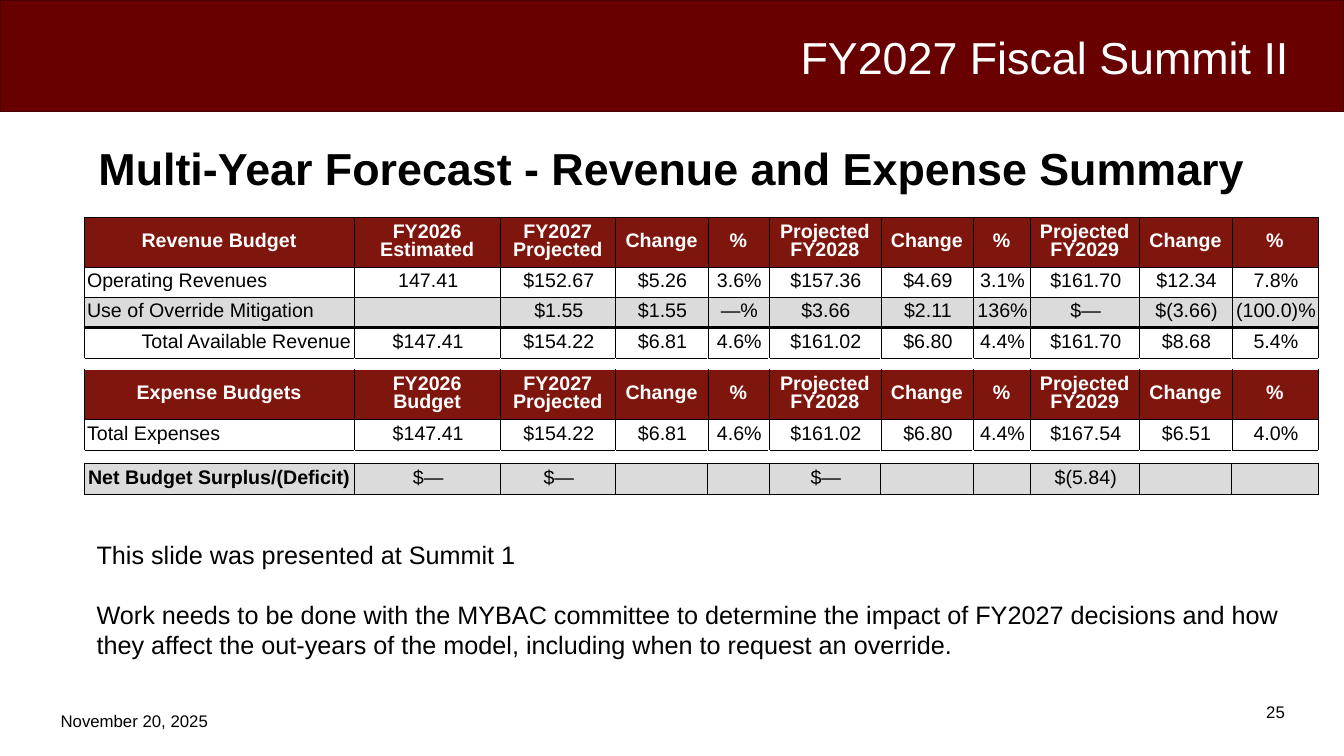
from dataclasses import dataclass

import pptx
import pptx.dml.color
import pptx.enum.shapes
import pptx.enum.text
import pptx.oxml.ns
import pptx.util
from lxml import etree

ALIGN = pptx.enum.text.PP_ALIGN
ANCHOR = pptx.enum.text.MSO_ANCHOR
FONT = "Arial"
BLACK, WHITE = "000000", "FFFFFF"
BANNER, BANNER_EDGE = "680000", "4A0000"
HEADING_RED, GREY = "7F160E", "DBDBDB"

# The slide is a grid of 160 columns by 90 rows
SLIDE_W, SLIDE_H = pptx.util.Inches(13.33), pptx.util.Inches(7.5)


def cols(n: float) -> int:
    return round(SLIDE_W * n / 160)


def rows(n: float) -> int:
    return round(SLIDE_H * n / 90)


def rgb(color: str) -> pptx.dml.color.RGBColor:
    return pptx.dml.color.RGBColor.from_string(color)


@dataclass(frozen=True)
class Box:
    left: float
    top: float
    width: float
    height: float

    def place(self) -> tuple[int, int, int, int]:
        return cols(self.left), rows(self.top), cols(self.width), rows(self.height)


@dataclass(frozen=True)
class Label:
    text: str
    box: Box
    size: float
    color: str = BLACK
    align: ALIGN = ALIGN.CENTER
    spacing: float = 1.0


@dataclass(frozen=True)
class Rule:
    color: str = BLACK
    width: float = 0.25


@dataclass(frozen=True)
class Row:
    height: float
    cells: tuple[str, ...]
    fill: str | None = None
    color: str = BLACK
    bold: bool = False
    label_bold: bool = False
    label_align: ALIGN = ALIGN.LEFT
    side: Rule = Rule()


COLUMN_WIDTHS = (32.16, 17.4, 13.7, 11, 7.3, 13.3, 11, 6.8, 13, 11, 10.3)
FORECAST_HEADINGS = ("FY2027 Projected", "Change", "%", "Projected FY2028", "Change", "%",
                     "Projected FY2029", "Change", "%")


def heading(name: str, base_year: str) -> Row:
    return Row(6, (name, base_year, *FORECAST_HEADINGS), HEADING_RED, WHITE, True, True, ALIGN.CENTER)


def gap(height: float) -> Row:
    return Row(height, ("",) * len(COLUMN_WIDTHS), side=Rule(WHITE, 1))


BUDGET_ROWS = (
    heading("Revenue Budget", "FY2026 Estimated"),
    Row(3.6, ("Operating Revenues", "147.41", "$152.67", "$5.26", "3.6%", "$157.36", "$4.69",
              "3.1%", "$161.70", "$12.34", "7.8%")),
    Row(3.6, ("Use of Override Mitigation", "", "$1.55", "$1.55", "—%", "$3.66", "$2.11",
              "136%", "$—", "$(3.66)", "(100.0)%"), GREY),
    Row(3.6, ("Total Available Revenue", "$147.41", "$154.22", "$6.81", "4.6%", "$161.02", "$6.80",
              "4.4%", "$161.70", "$8.68", "5.4%"), label_align=ALIGN.RIGHT),
    gap(1.35),
    heading("Expense Budgets", "FY2026 Budget"),
    Row(3.6, ("Total Expenses", "$147.41", "$154.22", "$6.81", "4.6%", "$161.02", "$6.80",
              "4.4%", "$167.54", "$6.51", "4.0%")),
    gap(1.65),
    Row(3.6, ("Net Budget Surplus/(Deficit)", "$—", "$—", "", "", "$—", "", "", "$(5.84)", "", ""),
        GREY, label_bold=True, label_align=ALIGN.CENTER, side=Rule(width=0.5)),
)
# Horizontal rules, from above the first row to below the last
ROW_RULES = (Rule(), Rule(), Rule(), Rule(width=3), Rule(), Rule(WHITE, 1), Rule(), Rule(),
             Rule(width=0.5), Rule(width=0.5))


def add_run(p, text: str, size: float, color: str = BLACK, bold: bool = False) -> None:
    r = p.add_run()
    r.text = text
    r.font.name, r.font.size, r.font.bold = FONT, pptx.util.Pt(size), bold
    r.font.color.rgb = rgb(color)


def set_frame(tf) -> None:
    tf.word_wrap = True
    tf.auto_size = pptx.enum.text.MSO_AUTO_SIZE.NONE
    tf.margin_left = tf.margin_right = cols(1.2)
    tf.margin_top, tf.margin_bottom = rows(0.72), rows(1.2)


def add_label(s, label: Label) -> None:
    tf = s.shapes.add_textbox(*label.box.place()).text_frame
    set_frame(tf)
    p = tf.paragraphs[0]
    p.alignment, p.line_spacing = label.align, label.spacing
    add_run(p, label.text, label.size, label.color)


def set_borders(cell, side: Rule, top: Rule, bottom: Rule) -> None:
    props = cell._tc.get_or_add_tcPr()
    edges = {"lnL": side, "lnR": side, "lnT": top, "lnB": bottom}
    for i, (tag, rule) in enumerate(edges.items()):
        line = etree.Element(pptx.oxml.ns.qn(f"a:{tag}"), w=str(pptx.util.Pt(rule.width)))
        fill = etree.SubElement(line, pptx.oxml.ns.qn("a:solidFill"))
        etree.SubElement(fill, pptx.oxml.ns.qn("a:srgbClr"), val=rule.color)
        props.insert(i, line)


def fill_cell(cell, row: Row, column: int) -> None:
    text, is_label = row.cells[column], column == 0
    cell.vertical_anchor = ANCHOR.MIDDLE
    cell.margin_left = cols(0.36)
    cell.margin_right = cols(0.36 if is_label or row.bold else 0.12)
    cell.margin_top = cell.margin_bottom = 0
    if row.fill:
        cell.fill.solid()
        cell.fill.fore_color.rgb = rgb(row.fill)
    else:
        cell.fill.background()
    p = cell.text_frame.paragraphs[0]
    p.alignment = row.label_align if is_label else ALIGN.CENTER
    p.line_spacing = 0.83
    if text:
        add_run(p, text, 14, row.color, row.label_bold if is_label else row.bold)
    else:
        # A small end mark keeps empty rows at their height
        etree.SubElement(p._p, pptx.oxml.ns.qn("a:endParaRPr"), sz="400")


def add_budget_table(s, left: float, top: float) -> None:
    box = Box(left, top, sum(COLUMN_WIDTHS), sum(row.height for row in BUDGET_ROWS))
    table = s.shapes.add_table(len(BUDGET_ROWS), len(COLUMN_WIDTHS), *box.place()).table
    table.first_row = table.horz_banding = False
    for column, width in zip(table.columns, COLUMN_WIDTHS):
        column.width = cols(width)
    for i, row in enumerate(BUDGET_ROWS):
        table.rows[i].height = rows(row.height)
        for j in range(len(COLUMN_WIDTHS)):
            fill_cell(table.cell(i, j), row, j)
            set_borders(table.cell(i, j), row.side, ROW_RULES[i], ROW_RULES[i + 1])


def place_placeholder(sp, box: Box):
    sp.left, sp.top, sp.width, sp.height = box.place()
    set_frame(sp.text_frame)
    return sp.text_frame


def main() -> None:
    prs = pptx.Presentation()
    prs.slide_width, prs.slide_height = SLIDE_W, SLIDE_H
    s = prs.slides.add_slide(prs.slide_layouts[1])

    # Banner, date and page number
    banner = s.shapes.add_shape(pptx.enum.shapes.MSO_SHAPE.RECTANGLE, *Box(0, 0, 160, 13.3).place())
    banner.shadow.inherit = False
    banner.fill.solid()
    banner.fill.fore_color.rgb = rgb(BANNER)
    banner.line.color.rgb = rgb(BANNER_EDGE)
    banner.line.width = pptx.util.Pt(1)
    for label in (
        Label("FY2027 Fiscal Summit II", Box(94.1, 3.7, 62.9, 7.1), 32, WHITE, ALIGN.LEFT, 0.87),
        Label("25", Box(147.4, 82.8, 8.9, 4.2), 12),
        Label("November 20, 2025", Box(4.2, 83.9, 23.6, 4.2), 12),
    ):
        add_label(s, label)

    # Title
    tf = place_placeholder(s.shapes.title, Box(9.6, 16, 140.8, 9.1))
    tf.margin_top, tf.margin_bottom = rows(0.36), rows(0.6)
    tf.vertical_anchor = ANCHOR.MIDDLE
    p = tf.paragraphs[0]
    p.alignment, p.line_spacing = ALIGN.CENTER, 0.87
    add_run(p, "Multi-Year Forecast - Revenue and Expense Summary", 32, bold=True)

    add_budget_table(s, 10, 25.8)

    # Remarks
    tf = place_placeholder(s.placeholders[1], Box(10.3, 63.5, 143.2, 18.4))
    remarks = (
        "This slide was presented at Summit 1",
        "Work needs to be done with the MYBAC committee to determine the impact of FY2027 decisions "
        "and how they affect the out-years of the model, including when to request an override.",
    )
    for i, remark in enumerate(remarks):
        p = tf.add_paragraph() if i else tf.paragraphs[0]
        props = p._p.get_or_add_pPr()
        props.set("marL", "0")
        props.set("indent", "0")
        etree.SubElement(props, pptx.oxml.ns.qn("a:buNone"))
        p.space_before = pptx.util.Pt(21 if i else 0)
        add_run(p, remark, 18)

    prs.save("out.pptx")


if __name__ == "__main__":
    main()
